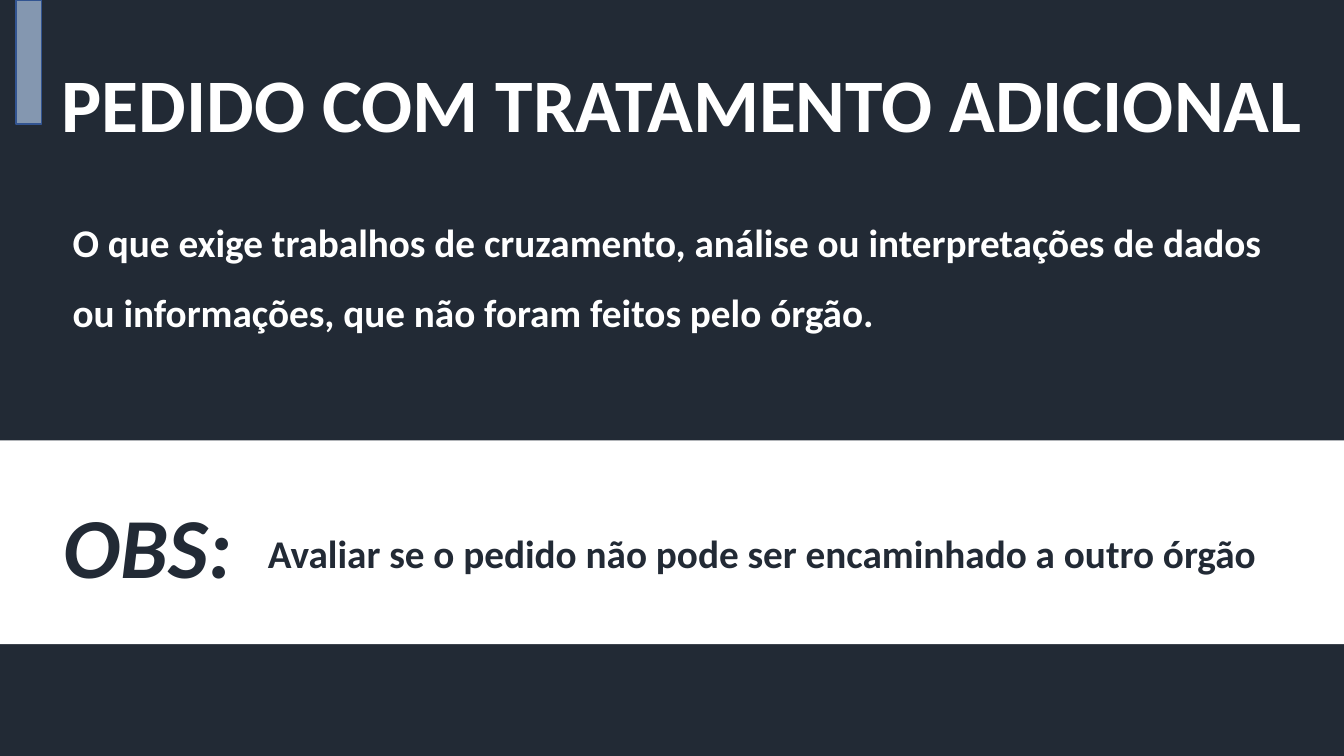
from pptx import Presentation
from pptx import util as u
from pptx.dml.color import RGBColor
from pptx.enum import shapes, text
from pptx.oxml.ns import qn

NAVY = RGBColor(0x22, 0x2A, 0x35)
WHITE = RGBColor(0xFF, 0xFF, 0xFF)
STEEL = RGBColor(0x84, 0x97, 0xB0)
BLUE = RGBColor(0x32, 0x54, 0x91)


class SlideBuilder:
    font = "Calibri"

    def __init__(self, deck, layout, background):
        self.width, self.height = deck.slide_width, deck.slide_height
        self.slide = deck.slides.add_slide(deck.slide_layouts[layout])
        self.slide.background.fill.solid()
        self.slide.background.fill.fore_color.rgb = background

    def area(self, left, top, width, height):
        return (
            int(self.width * left / 100),
            int(self.height * top / 100),
            int(self.width * width / 100),
            int(self.height * height / 100),
        )

    def rectangle(self, percents, fill, outline=None):
        block = self.slide.shapes.add_shape(
            shapes.MSO_SHAPE.RECTANGLE, *self.area(*percents)
        )
        block.shadow.inherit = False
        block.fill.solid()
        block.fill.fore_color.rgb = fill
        if outline is None:
            block.line.fill.background()
        else:
            block.line.color.rgb = outline
            block.line.width = u.Pt(1)

    def placeholder(self, index, percents, words, **style):
        holder = self.slide.placeholders[index]
        holder.left, holder.top, holder.width, holder.height = self.area(*percents)
        self.set_words(holder.text_frame, words, **style)

    def textbox(self, percents, words, **style):
        box = self.slide.shapes.add_textbox(*self.area(*percents))
        self.set_words(box.text_frame, words, **style)

    def set_words(self, frame, words, size, color, spacing, middle=False, italic=False):
        frame.word_wrap = True
        frame.auto_size = text.MSO_AUTO_SIZE.NONE
        anchors = text.MSO_ANCHOR
        frame.vertical_anchor = anchors.MIDDLE if middle else anchors.TOP
        paragraph = frame.paragraphs[0]
        paragraph.alignment = text.PP_ALIGN.LEFT
        paragraph.line_spacing = spacing
        paragraph.space_before = u.Pt(0)
        properties = paragraph._p.get_or_add_pPr()
        properties.set("marL", "0")
        properties.set("indent", "0")
        properties.append(properties.makeelement(qn("a:buNone"), {}))
        run = paragraph.add_run()
        run.text = words
        run.font.name = self.font
        run.font.size = u.Pt(size)
        run.font.bold = True
        run.font.italic = italic
        run.font.color.rgb = color


def main():
    deck = Presentation()
    deck.slide_width, deck.slide_height = u.Inches(13.33), u.Inches(7.5)
    page = SlideBuilder(deck, 1, NAVY)
    page.rectangle((0, 58.27, 100, 26.93), WHITE)
    page.placeholder(
        0, (3.83, 6.8, 94.05, 15.07), "PEDIDO COM TRATAMENTO ADICIONAL",
        size=54, color=WHITE, spacing=0.9, middle=True,
    )
    page.placeholder(
        1, (4.65, 25.07, 90.68, 22),
        "O que exige trabalhos de cruzamento, análise ou interpretações de dados "
        "ou informações, que não foram feitos pelo órgão.",
        size=28, color=WHITE, spacing=1.5,
    )
    page.rectangle((1.2, 0, 1.88, 16.4), STEEL, BLUE)
    page.textbox(
        (19.2, 66.27, 79.35, 18.67),
        "Avaliar se o pedido não pode ser encaminhado a outro órgão",
        size=28, color=NAVY, spacing=1.5,
    )
    page.textbox(
        (3.98, 60, 15.23, 18.67), "OBS:",
        size=61, color=NAVY, spacing=1.4, middle=True, italic=True,
    )
    deck.save("out.pptx")


if __name__ == "__main__":
    main()
